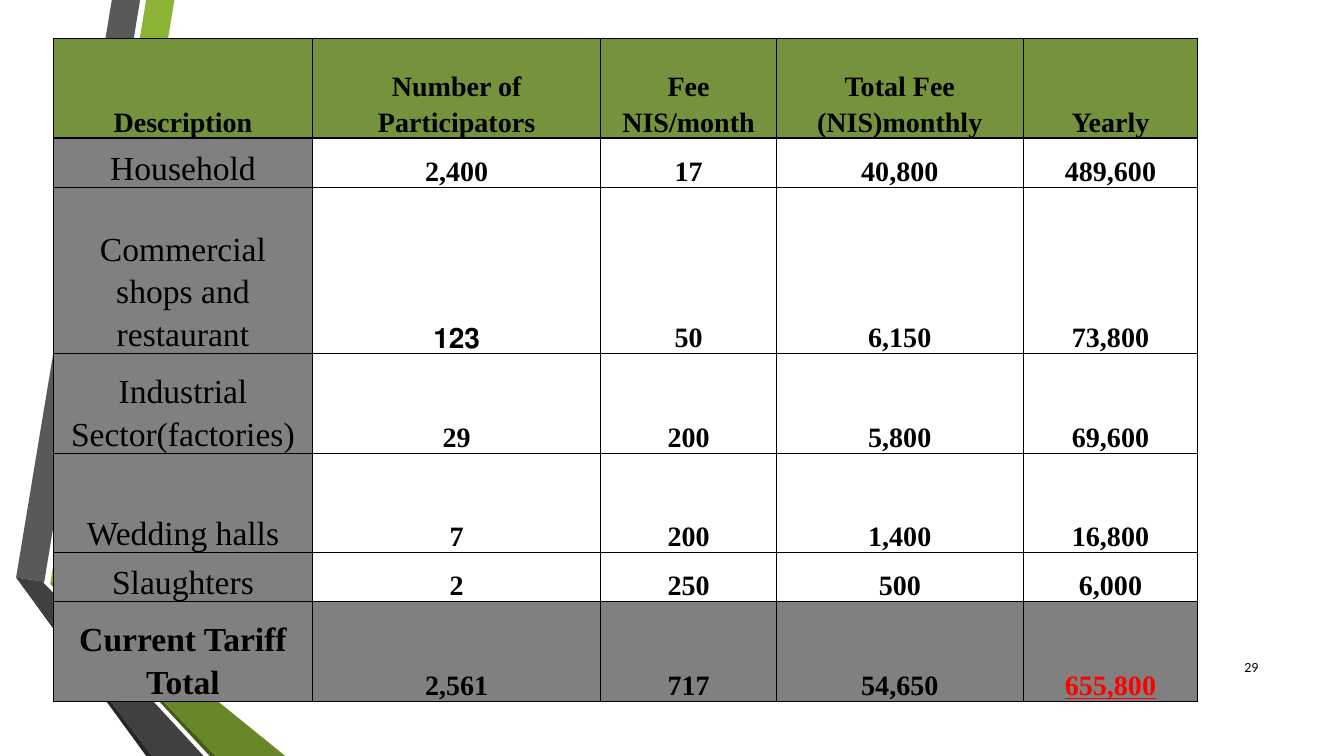
from lxml.etree import SubElement
from pptx import Presentation
from pptx.dml.color import RGBColor
from pptx.enum.text import MSO_ANCHOR, PP_ALIGN
from pptx.oxml.ns import qn
from pptx.util import Pt

PX = 9144
BLACK = RGBColor(0x00, 0x00, 0x00)
RED = RGBColor(0xFF, 0x00, 0x00)
HEADER_GREEN = RGBColor(0x75, 0x92, 0x3C)
LABEL_GREY = RGBColor(0x80, 0x80, 0x80)
LIME = RGBColor(0x8B, 0xB4, 0x34)
SLATE = RGBColor(0x59, 0x59, 0x59)
CHARCOAL = RGBColor(0x26, 0x26, 0x26)
MOSS = RGBColor(0x46, 0x5A, 0x1A)
LEAF = RGBColor(0x68, 0x87, 0x27)
GRAPHITE = RGBColor(0x40, 0x40, 0x40)

RIBBONS = [
    (LIME, [(34, 578), (61, 583), (157, 0), (129, 0)]),
    (SLATE, [(123, 0), (95, 0), (0, 573), (28, 577)]),
    (CHARCOAL, [(0, 573), (129, 750), (135, 750)]),
    (MOSS, [(34, 579), (192, 750), (198, 750)]),
    (LEAF, [(34, 579), (198, 750), (267, 750), (61, 583), (34, 578)]),
    (GRAPHITE, [(186, 750), (32, 583), (27, 578), (28, 577), (0, 573), (135, 750)]),
]
COLS = [257, 286, 174, 245, 173]
ROWS = [99, 49, 165, 99, 98, 49, 99]
DATA = [
    ["Description", "Number of Participators", "Fee NIS/month",
     "Total Fee (NIS)monthly", "Yearly"],
    ["Household", "2,400", "17", "40,800", "489,600"],
    ["Commercial shops and restaurant", "123", "50", "6,150", "73,800"],
    ["Industrial Sector(factories)", "29", "200", "5,800", "69,600"],
    ["Wedding halls", "7", "200", "1,400", "16,800"],
    ["Slaughters", "2", "250", "500", "6,000"],
    ["Current Tariff Total", "2,561", "717", "54,650", "655,800"],
]


def add_ribbons(s, left, top):
    """Draw the folded ribbons from the given corner."""
    for color, points in RIBBONS:
        (x, y), *rest = [(left + px, top + py) for px, py in points]
        builder = s.shapes.build_freeform(x, y, scale=PX)
        builder.add_line_segments(rest, close=True)
        sp = builder.convert_to_shape()
        sp.shadow.inherit = False
        sp.fill.solid()
        sp.fill.fore_color.rgb = color
        sp.line.fill.background()


def add_borders(cell):
    """Give a cell thin black borders on all four sides."""
    tcPr = cell._tc.get_or_add_tcPr()
    for side in ("lnL", "lnR", "lnT", "lnB"):
        ln = SubElement(tcPr, qn(f"a:{side}"), w=str(Pt(1)))
        fill = SubElement(ln, qn("a:solidFill"))
        SubElement(fill, qn("a:srgbClr"), val=str(BLACK))


def format_cell(cell, text, fill, size, bold):
    """Fill a cell and set its centred, bottom-aligned text."""
    add_borders(cell)
    if fill is None:
        cell.fill.background()
    else:
        cell.fill.solid()
        cell.fill.fore_color.rgb = fill
    cell.vertical_anchor = MSO_ANCHOR.BOTTOM
    cell.margin_left = cell.margin_right = 7 * PX
    cell.margin_top = cell.margin_bottom = 0
    cell.text_frame.text = text
    p = cell.text_frame.paragraphs[0]
    p.alignment = PP_ALIGN.CENTER
    p.line_spacing = 1.15
    font = p.runs[0].font
    font.name = "Times New Roman"
    font.size = Pt(size)
    font.bold = bold
    font.color.rgb = BLACK


def add_tariff_table(s, left, top):
    """Place the tariff table at the given corner."""
    table = s.shapes.add_table(len(ROWS), len(COLS), left * PX, top * PX,
                               sum(COLS) * PX, sum(ROWS) * PX).table
    table.horz_banding = False
    table.first_row = False
    for column, width in zip(table.columns, COLS):
        column.width = width * PX
    for row, height in zip(table.rows, ROWS):
        row.height = height * PX
    last = len(ROWS) - 1
    for i, values in enumerate(DATA):
        for j, text in enumerate(values):
            label = j == 0 and i > 0
            if i == 0:
                fill = HEADER_GREEN
            else:
                fill = LABEL_GREY if label or i == last else None
            format_cell(table.cell(i, j), text, fill, 24 if label else 20,
                        not label or i == last)
    shops = table.cell(2, 1).text_frame.paragraphs[0]
    shops._p.get_or_add_pPr().set("rtl", "1")
    total = table.cell(last, 4).text_frame.paragraphs[0].runs[0].font
    total.color.rgb = RED
    total.underline = True


def add_page_number(s, left, top, width, height):
    """Place the page number in the given box."""
    tf = s.shapes.add_textbox(left * PX, top * PX, width * PX, height * PX).text_frame
    tf.word_wrap = True
    tf.vertical_anchor = MSO_ANCHOR.MIDDLE
    tf.text = "29"
    p = tf.paragraphs[0]
    p.alignment = PP_ALIGN.RIGHT
    font = p.runs[0].font
    font.name = "Calibri"
    font.size = Pt(10)
    font.color.rgb = BLACK


def main():
    """Build and save the slide."""
    prs = Presentation()
    prs.slide_width = 1333 * PX
    prs.slide_height = 750 * PX
    s = prs.slides.add_slide(prs.slide_layouts[6])
    add_ribbons(s, 16, 0)
    add_page_number(s, 1198, 642, 60, 40)
    add_tariff_table(s, 53, 38)
    prs.save("out.pptx")


if __name__ == "__main__":
    main()
